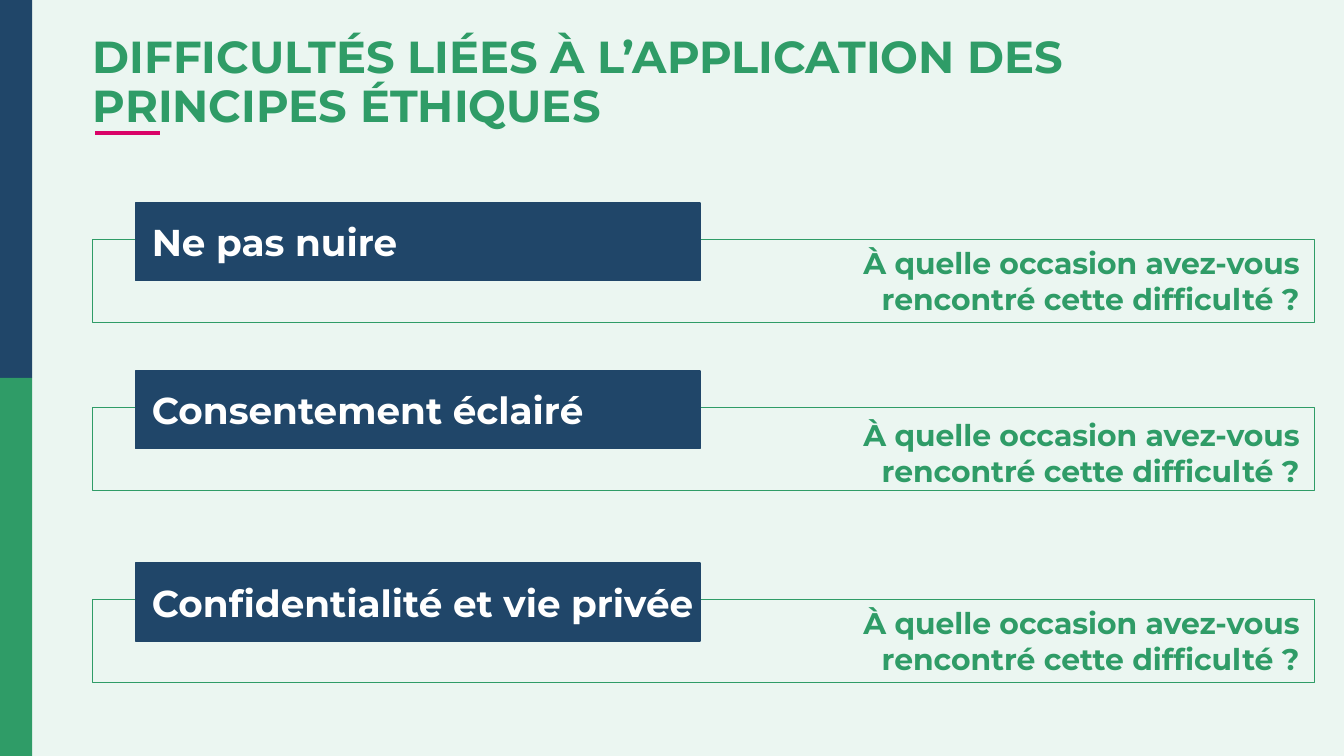
import pptx
import pptx.util
from pptx.dml.color import RGBColor
from pptx.enum.shapes import MSO_CONNECTOR, MSO_SHAPE
from pptx.enum.text import MSO_ANCHOR, PP_ALIGN
from pptx.oxml.ns import qn
from pptx.util import Inches, Pt
from lxml import etree

MINT = RGBColor(0xEB, 0xF6, 0xF1)
GREEN = RGBColor(0x2F, 0x9C, 0x67)
NAVY = RGBColor(0x20, 0x46, 0x69)
PINK = RGBColor(0xD9, 0x03, 0x68)
WHITE = RGBColor(0xFF, 0xFF, 0xFF)
FONT = "Montserrat"

WIDTH = 10
HEIGHT = WIDTH * 9 / 16

TITLE = "DIFFICULTÉS LIÉES À L’APPLICATION DES PRINCIPES ÉTHIQUES"
QUESTION = "À quelle occasion avez-vous rencontré cette difficulté ?"
# principle, top of its label, top of its question
PRINCIPLES = [
    ("Ne pas nuire", 1.51, 1.77),
    ("Consentement éclairé", 2.76, 3.05),
    ("Confidentialité et vie privée", 4.19, 4.45),
]
FRAME_DROP = 0.27  # from the top of a label to the top of its frame


def add_rect(shapes, box, fill=None, line=None):
    sp = shapes.add_shape(MSO_SHAPE.RECTANGLE, *map(Inches, box))
    sp.shadow.inherit = False
    if fill is None:
        sp.fill.background()
    else:
        sp.fill.solid()
        sp.fill.fore_color.rgb = fill
    if line is None:
        sp.line.fill.background()
    else:
        sp.line.color.rgb = line
        sp.line.width = Pt(0.75)
    return sp


def write(sp, text, size, color, margins, align=PP_ALIGN.LEFT, anchor=MSO_ANCHOR.TOP):
    """Fill a shape with one bold paragraph; margins are left, top, right, bottom."""
    tf = sp.text_frame
    tf.word_wrap = True
    tf.vertical_anchor = anchor
    tf.margin_left, tf.margin_top, tf.margin_right, tf.margin_bottom = map(Inches, margins)
    p = tf.paragraphs[0]
    p.text = text
    p.alignment = align
    p.font.name = FONT
    p.font.size = Pt(size)
    p.font.bold = True
    p.font.color.rgb = color
    return p


prs = pptx.Presentation()
prs.slide_width, prs.slide_height = Inches(WIDTH), Inches(HEIGHT)
s = prs.slides.add_slide(prs.slide_layouts[5])
s.background.fill.solid()
s.background.fill.fore_color.rgb = MINT

underline = s.shapes.add_connector(
    MSO_CONNECTOR.STRAIGHT, Inches(0.71), Inches(0.99), Inches(1.19), Inches(0.99))
underline.line.color.rgb = PINK
underline.line.width = Pt(2.25)
etree.SubElement(underline._element.spPr, qn("a:effectLst"))

title = s.shapes.title
title.left, title.top, title.width, title.height = map(Inches, (0.69, 0.21, 8.62, 0.83))
write(title, TITLE, 24, GREEN, (0, 0.05, 0.1, 0.05)).line_spacing = 0.9

for i, color in enumerate((NAVY, GREEN)):
    add_rect(s.shapes, (0, i * HEIGHT / 2, 0.24, HEIGHT / 2), fill=color)

for principle, top, question_top in PRINCIPLES:
    group = s.shapes.add_group_shape()
    add_rect(group.shapes, (0.69, top + FRAME_DROP, 9.09, 0.62), line=GREEN)
    label = add_rect(group.shapes, (1.01, top, 4.2, 0.58), fill=NAVY, line=NAVY)
    write(label, principle, 20, WHITE, (0.12, 0.12, 0.04, 0.12), anchor=MSO_ANCHOR.MIDDLE)
    question = s.shapes.add_textbox(*map(Inches, (5.72, question_top, 4.05, 0.64)))
    write(question, QUESTION, 16, GREEN, (0.1, 0.05, 0.1, 0.05), align=PP_ALIGN.RIGHT)

prs.save("out.pptx")
